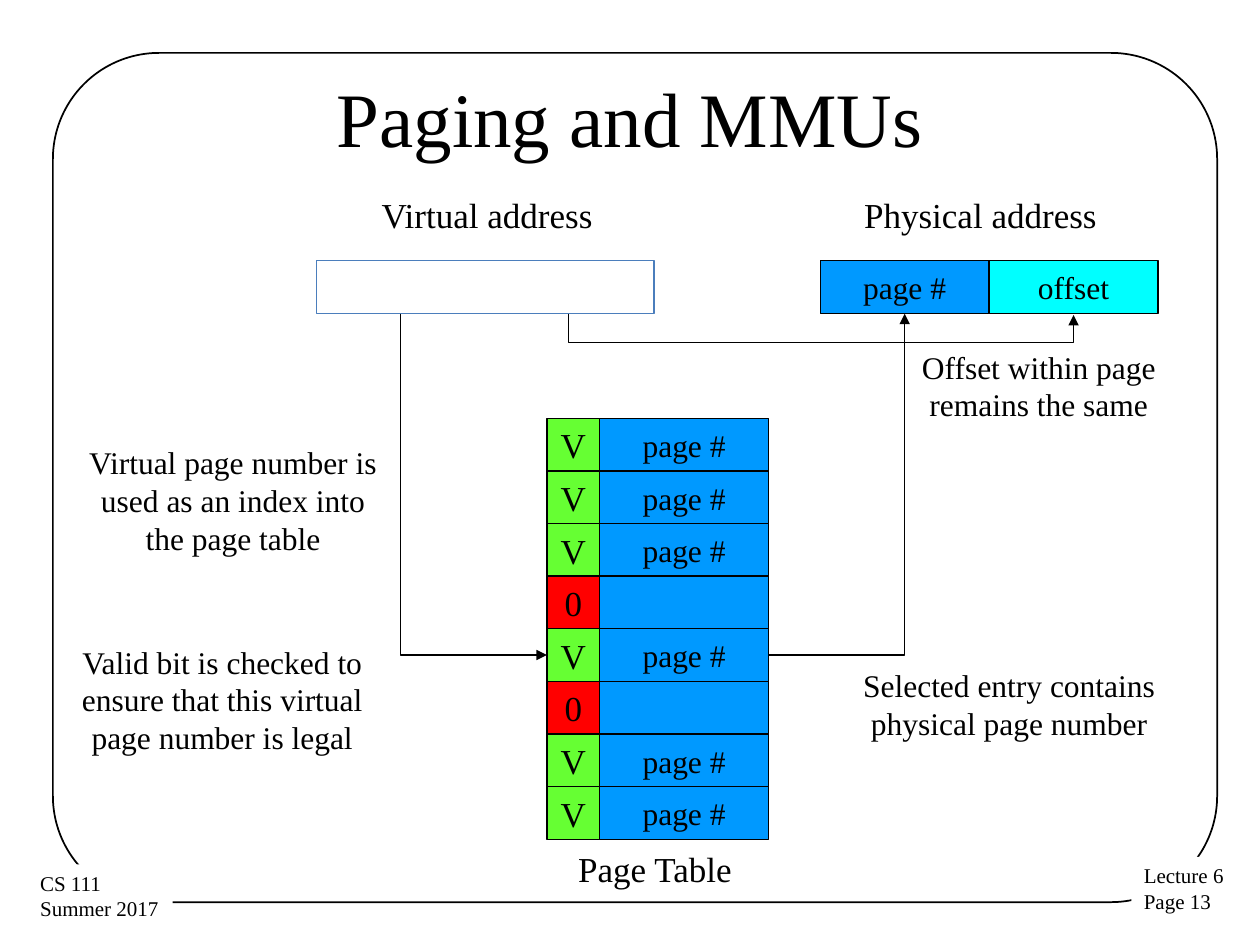
"""Build the "Paging and MMUs" address translation slide."""
from dataclasses import dataclass
from typing import Optional

from lxml.etree import SubElement
from pptx import Presentation
from pptx.dml.color import RGBColor
from pptx.enum.shapes import MSO_CONNECTOR, MSO_SHAPE
from pptx.enum.text import MSO_ANCHOR, MSO_AUTO_SIZE, PP_ALIGN
from pptx.oxml.ns import qn
from pptx.util import Inches, Pt

FONT = "Times New Roman"
BLACK = RGBColor(0x00, 0x00, 0x00)
WHITE = RGBColor(0xFF, 0xFF, 0xFF)
BLUE = RGBColor(0x00, 0x99, 0xFF)
CYAN = RGBColor(0x00, 0xFF, 0xFF)
GREEN = RGBColor(0x66, 0xFF, 0x33)
RED = RGBColor(0xFF, 0x00, 0x00)
STEEL = RGBColor(0x4B, 0x7E, 0xBC)

ADDRESS_TOP, CELL_H, CELL_W = 2.07, 0.42, 1.34
VIRTUAL_X, PHYSICAL_X = 2.51, 6.51
TABLE_X, TABLE_TOP, VALID_W, ROW_PITCH = 4.34, 3.32, 0.42, 3.34 / 8
VALID_BITS = "VVV0V0VV"
SELECTED_ROW = 4


@dataclass
class Box:
    left: float
    top: float
    width: float
    height: float
    fill: Optional[RGBColor] = None
    text: str = ""
    size: int = 18
    line: Optional[RGBColor] = BLACK
    weight: float = 0.75
    shape: MSO_SHAPE = MSO_SHAPE.RECTANGLE
    align: PP_ALIGN = PP_ALIGN.CENTER
    anchor: MSO_ANCHOR = MSO_ANCHOR.MIDDLE


@dataclass
class Label:
    left: float
    top: float
    width: float
    height: float
    text: str
    size: int = 18
    wrap: bool = True


@dataclass
class Elbow:
    x1: float
    y1: float
    x2: float
    y2: float
    preset: str
    turned: bool = False
    bend: Optional[int] = None


def write(tf, text: str, size: int, align: PP_ALIGN) -> None:
    """Set the text of a frame and format its paragraphs."""
    tf.text = text
    for p in tf.paragraphs:
        p.alignment = align
        p.font.name, p.font.size = FONT, Pt(size)
        p.font.color.rgb = BLACK


def draw_box(slide, b: Box) -> None:
    """Draw a preset shape with optional fill, line and text."""
    sp = slide.shapes.add_shape(
        b.shape, Inches(b.left), Inches(b.top), Inches(b.width), Inches(b.height))
    sp.shadow.inherit = False
    if b.shape == MSO_SHAPE.ROUNDED_RECTANGLE:
        sp.adjustments[0] = 0.125
    if b.fill is None:
        sp.fill.background()
    else:
        sp.fill.solid()
        sp.fill.fore_color.rgb = b.fill
    if b.line is None:
        sp.line.fill.background()
    else:
        sp.line.color.rgb = b.line
        sp.line.width = Pt(b.weight)
    if b.text:
        tf = sp.text_frame
        tf.word_wrap = False
        tf.vertical_anchor = b.anchor
        write(tf, b.text, b.size, b.align)


def draw_label(slide, lb: Label) -> None:
    """Draw a text box, centred when it wraps."""
    sp = slide.shapes.add_textbox(
        Inches(lb.left), Inches(lb.top), Inches(lb.width), Inches(lb.height))
    tf = sp.text_frame
    tf.word_wrap = lb.wrap
    tf.auto_size = MSO_AUTO_SIZE.SHAPE_TO_FIT_TEXT
    write(tf, lb.text, lb.size, PP_ALIGN.CENTER if lb.wrap else PP_ALIGN.LEFT)


def draw_elbow(slide, e: Elbow) -> None:
    """Draw a bent arrow; a turned one leaves its start vertically."""
    x1, y1, x2, y2 = e.x1, e.y1, e.x2, e.y2
    if e.turned:
        cx, cy = (x1 + x2) / 2, (y1 + y2) / 2
        half_w, half_h = (y2 - y1) / 2, (x2 - x1) / 2
        x1, y1, x2, y2 = cx + half_w, cy - half_h, cx - half_w, cy + half_h
    c = slide.shapes.add_connector(
        MSO_CONNECTOR.ELBOW, Inches(x1), Inches(y1), Inches(x2), Inches(y2))
    c.line.color.rgb = BLACK
    c.line.width = Pt(0.75)
    sp_pr = c._element.spPr
    if e.turned:
        sp_pr.find(qn("a:xfrm")).set("rot", str(270 * 60000))
    geom = sp_pr.find(qn("a:prstGeom"))
    geom.set("prst", e.preset)
    if e.bend is not None:
        SubElement(geom.find(qn("a:avLst")), qn("a:gd"), name="adj1", fmla=f"val {e.bend}")
    SubElement(sp_pr.find(qn("a:ln")), qn("a:tailEnd"), type="triangle")
    SubElement(sp_pr, qn("a:effectLst"))


def page_table() -> list[Box]:
    """Return the valid bit and page number cells of every row."""
    cells = []
    for i, bit in enumerate(VALID_BITS):
        top, valid = TABLE_TOP + i * ROW_PITCH, bit == "V"
        cells += [
            Box(TABLE_X + VALID_W, top, CELL_W, CELL_H, BLUE, "page #" if valid else ""),
            Box(TABLE_X, top, VALID_W, CELL_H, GREEN if valid else RED, bit, 20),
        ]
    return cells


def main() -> None:
    """Compose and save the slide."""
    prs = Presentation()
    prs.slide_width, prs.slide_height = Inches(10), Inches(7.5)
    slide = prs.slides.add_slide(prs.slide_layouts[5])

    title = slide.shapes.title
    title.left, title.top = Inches(0.5), Inches(0.3)
    title.width, title.height = Inches(9), Inches(1.25)
    title.text_frame.vertical_anchor = MSO_ANCHOR.MIDDLE
    write(title.text_frame, "Paging and MMUs", 44, PP_ALIGN.CENTER)

    footer = dict(fill=WHITE, size=12, line=None, align=PP_ALIGN.LEFT, anchor=MSO_ANCHOR.TOP)
    boxes = [
        Box(0.42, 0.42, 9.24, 6.74, weight=1, shape=MSO_SHAPE.ROUNDED_RECTANGLE),
        Box(8.98, 6.8, 0.84, 0.51, text="Lecture 6\nPage 13", **footer),
        Box(0.22, 6.86, 1.15, 0.51, text="CS 111\nSummer 2017", **footer),
        Box(PHYSICAL_X, ADDRESS_TOP, CELL_W, CELL_H, BLUE, "page #"),
        Box(PHYSICAL_X + CELL_W, ADDRESS_TOP, CELL_W, CELL_H, CYAN, "offset"),
        Box(VIRTUAL_X, ADDRESS_TOP, 2 * CELL_W, CELL_H, WHITE, line=STEEL),
    ]
    for box in boxes + page_table():
        draw_box(slide, box)

    address_bottom = ADDRESS_TOP + CELL_H
    row_y = TABLE_TOP + (SELECTED_ROW + 0.5) * ROW_PITCH
    page_x, offset_x = PHYSICAL_X + CELL_W / 2, PHYSICAL_X + CELL_W * 1.5
    table_right = TABLE_X + VALID_W + CELL_W
    for elbow in (
        Elbow(3.18, address_bottom, TABLE_X, row_y, "bentConnector2", turned=True),
        Elbow(table_right, row_y, page_x, address_bottom, "bentConnector2"),
        Elbow(4.51, address_bottom, offset_x, address_bottom + 0.01,
              "bentConnector3", turned=True, bend=2300000),
    ):
        draw_elbow(slide, elbow)

    for label in (
        Label(2.93, 1.49, 1.9, 0.44, "Virtual address", 20, False),
        Label(6.76, 1.49, 2.06, 0.44, "Physical address", 20, False),
        Label(4.49, 6.68, 1.44, 0.44, "Page Table", 20, False),
        Label(0.6, 3.47, 2.5, 1.01,
              "Virtual page number is used as an index into the page table"),
        Label(6.68, 5.24, 2.66, 0.71, "Selected entry contains physical page number"),
        Label(6.91, 2.71, 2.67, 0.71, "Offset within page remains the same"),
        Label(0.43, 5.05, 2.67, 1.01,
              "Valid bit is checked to ensure that this virtual page number is legal"),
    ):
        draw_label(slide, label)

    prs.save("out.pptx")


if __name__ == "__main__":
    main()
